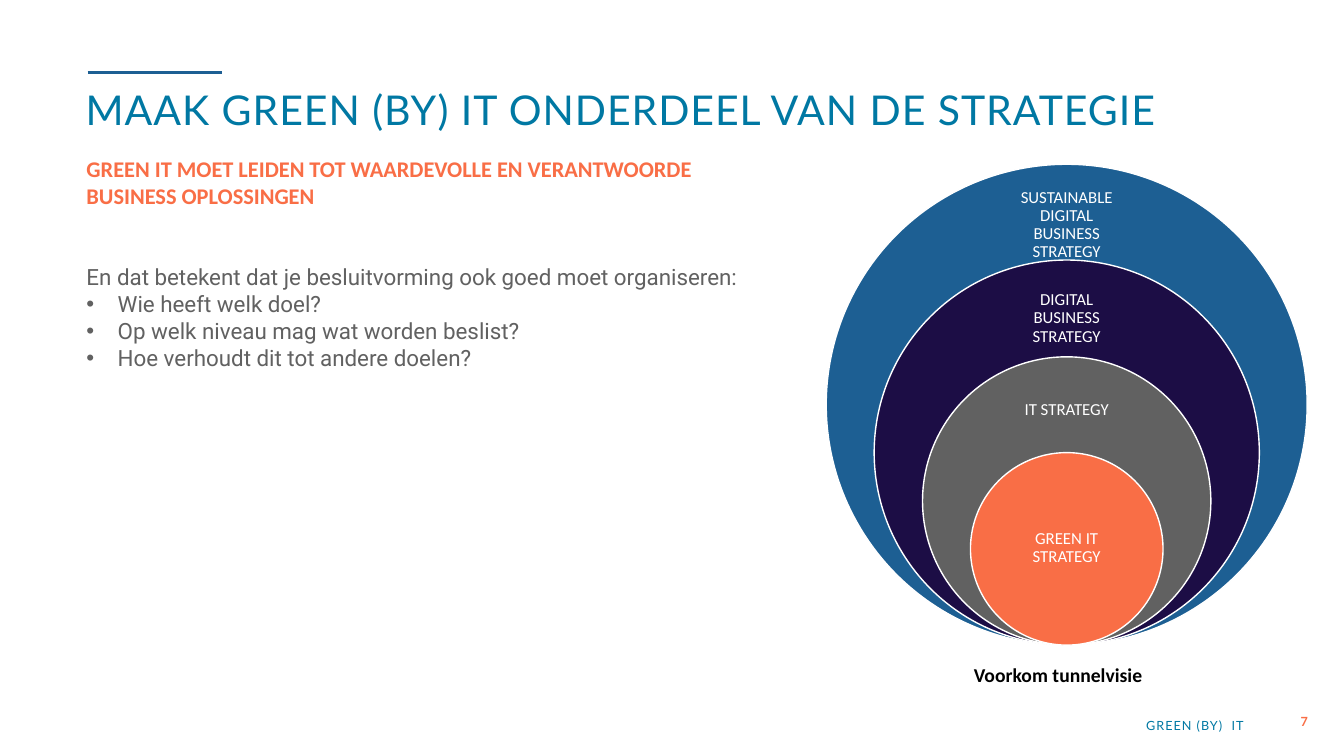
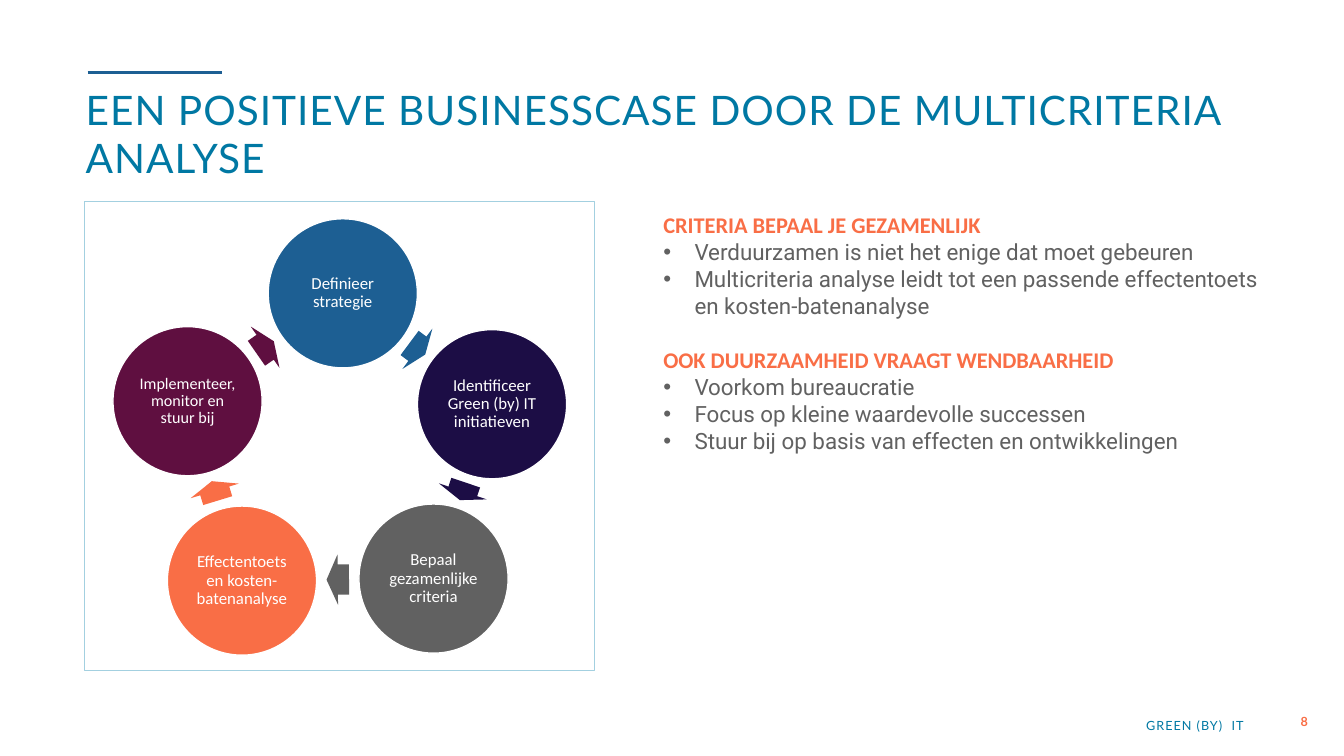
from dataclasses import dataclass
from itertools import pairwise
from math import atan2, degrees, hypot

from lxml.etree import SubElement
from pptx import Presentation
from pptx.dml.color import RGBColor
from pptx.enum.shapes import MSO_CONNECTOR, MSO_SHAPE
from pptx.enum.text import MSO_ANCHOR, PP_ALIGN
from pptx.oxml.ns import qn
from pptx.util import Inches, Pt


@dataclass(frozen=True)
class Theme:
    blue: str = "1D5F93"
    navy: str = "1C0D45"
    grey: str = "616161"
    orange: str = "F96E46"
    plum: str = "5F0F40"
    teal: str = "0078A3"
    pale_blue: str = "A3D0E0"
    white: str = "FFFFFF"
    black: str = "000000"
    title_font: str = "Lato"
    heading_font: str = "Calibri"
    body_font: str = "Roboto"
    title_size: float = 29
    body_size: float = 16
    caption_size: float = 14
    label_size: float = 12
    footer_size: float = 9
    tracking: float = 0.7


THEME = Theme()


def write(frame, text, *, font=THEME.heading_font, size=THEME.body_size, color=THEME.grey,
          bold=False, align=PP_ALIGN.LEFT, tracking=0, line_spacing=None, space_before=0,
          bullet=False):
    """Fill the empty first paragraph of the frame, or add another one."""
    paragraph = frame.paragraphs[0]
    if paragraph.runs:
        paragraph = frame.add_paragraph()
    paragraph.alignment = align
    if line_spacing:
        paragraph.line_spacing = line_spacing
    if space_before:
        paragraph.space_before = Pt(space_before)
    if bullet:
        properties = paragraph._p.get_or_add_pPr()
        properties.set("marL", str(Inches(0.31)))
        properties.set("indent", str(-Inches(0.31)))
        SubElement(properties, qn("a:buFont")).set("typeface", "Arial")
        SubElement(properties, qn("a:buChar")).set("char", "•")
    run = paragraph.add_run()
    run.text = text
    run.font.name = font
    run.font.size = Pt(size)
    run.font.bold = bold
    run.font.color.rgb = RGBColor.from_string(color)
    if tracking:
        run._r.get_or_add_rPr().set("spc", str(round(tracking * 100)))


def set_frame(frame, anchor, inset=None):
    frame.word_wrap = True
    frame.vertical_anchor = anchor
    if inset is not None:
        frame.margin_left = frame.margin_right = Inches(inset)
        frame.margin_top = frame.margin_bottom = Inches(inset)


class Deck:
    def __init__(self):
        self.presentation = Presentation()
        self.presentation.slide_width = Inches(13.33)
        self.presentation.slide_height = Inches(7.5)
        self.slide = None

    def start_slide(self, title, number, title_size=THEME.title_size):
        self.slide = self.presentation.slides.add_slide(self.presentation.slide_layouts[6])
        self.accent_line()
        title_style = {"font": THEME.title_font, "color": THEME.teal, "tracking": THEME.tracking}
        write(self.text_box(0.85, 0.84, 12.44, 0.77, inset=0), title, size=title_size, **title_style)
        write(self.text_box(11.27, 7.07, 1.6, 0.25), "GREEN (BY)  IT",
              size=THEME.footer_size, **title_style)
        write(self.text_box(12.58, 7, 0.71, 0.32, anchor=MSO_ANCHOR.MIDDLE), str(number),
              font=THEME.title_font, size=THEME.footer_size, color=THEME.orange, bold=True,
              align=PP_ALIGN.CENTER)

    def accent_line(self):
        line = self.slide.shapes.add_connector(
            MSO_CONNECTOR.STRAIGHT, Inches(0.87), Inches(0.72), Inches(2.2), Inches(0.72))
        line.line.color.rgb = RGBColor.from_string(THEME.blue)
        line.line.width = Pt(2.25)
        SubElement(line._element.spPr, qn("a:effectLst"))

    def text_box(self, left, top, width, height, anchor=MSO_ANCHOR.TOP, inset=None):
        box = self.slide.shapes.add_textbox(
            Inches(left), Inches(top), Inches(width), Inches(height))
        set_frame(box.text_frame, anchor, inset)
        return box.text_frame

    def shape(self, kind, left, top, width, height, fill, outline=None):
        shape = self.slide.shapes.add_shape(
            kind, Inches(left), Inches(top), Inches(width), Inches(height))
        shape.shadow.inherit = False
        shape.fill.solid()
        shape.fill.fore_color.rgb = RGBColor.from_string(fill)
        if outline:
            shape.line.color.rgb = RGBColor.from_string(outline)
            shape.line.width = Pt(1)
        else:
            shape.line.fill.background()
        return shape

    def circle(self, center_x, center_y, diameter, fill):
        return self.shape(MSO_SHAPE.OVAL, center_x - diameter / 2, center_y - diameter / 2,
                          diameter, diameter, fill, THEME.white)

    def label(self, frame, text, size=THEME.label_size):
        write(frame, text, size=size, color=THEME.white, align=PP_ALIGN.CENTER, line_spacing=0.9)

    def headings(self, frame, *headings):
        for index, heading in enumerate(headings):
            write(frame, heading, color=THEME.orange, bold=True, space_before=19.5 * (index > 0))

    def section(self, frame, heading, bullets, space_before=0):
        write(frame, heading, color=THEME.orange, bold=True, space_before=space_before)
        self.bullets(frame, bullets)

    def bullets(self, frame, bullets):
        for bullet in bullets:
            write(frame, bullet, font=THEME.body_font, bullet=True)

    def nested_circles(self, center_x, bottom, rings):
        """Draw rings (diameter, label depth, fill, text) that touch at the bottom."""
        label_width, label_height = 1.33, 0.95
        for diameter, label_depth, fill, text in rings:
            self.circle(center_x, bottom - diameter / 2, diameter, fill)
            label_top = bottom - diameter + label_depth - label_height / 2
            self.label(self.text_box(center_x - label_width / 2, label_top, label_width,
                                     label_height, MSO_ANCHOR.MIDDLE, 0.09), text)

    def cycle(self, diameter, steps):
        """Draw steps (x, y, fill, text, size) with an arrow halfway to each next step."""
        for x, y, fill, text, size in steps:
            frame = self.circle(x, y, diameter, fill).text_frame
            set_frame(frame, MSO_ANCHOR.MIDDLE, 0.02)
            self.label(frame, text, size)
        for (x, y, fill, *_), (next_x, next_y, *_) in pairwise(steps + steps[:1]):
            length = 0.53 * (hypot(next_x - x, next_y - y) - diameter)
            height = 0.5
            arrow = self.shape(MSO_SHAPE.RIGHT_ARROW, (x + next_x - length) / 2,
                               (y + next_y - height) / 2, length, height, fill)
            arrow.adjustments[0] = 0.6
            arrow.adjustments[1] = 0.5
            arrow.rotation = degrees(atan2(next_y - y, next_x - x)) % 360


def strategy_slide(deck):
    deck.start_slide("MAAK GREEN (BY) IT ONDERDEEL VAN DE STRATEGIE", 7, title_size=29.3)
    frame = deck.text_box(0.76, 1.49, 7.14, 3.06)
    write(frame, "GREEN IT MOET LEIDEN TOT WAARDEVOLLE EN VERANTWOORDE BUSINESS OPLOSSINGEN",
          color=THEME.orange, bold=True)
    write(frame, "En dat betekent dat je besluitvorming ook goed moet organiseren:",
          font=THEME.body_font, space_before=39)
    deck.bullets(frame, ["Wie heeft welk doel?", "Op welk niveau mag wat worden beslist?",
                         "Hoe verhoudt dit tot andere doelen?"])
    deck.nested_circles(10.58, 6.4, [
        (4.77, 0.6, THEME.blue, "SUSTAINABLE DIGITAL BUSINESS STRATEGY"),
        (3.82, 0.58, THEME.navy, "DIGITAL BUSINESS STRATEGY"),
        (2.86, 0.53, THEME.grey, "IT STRATEGY"),
        (1.91, 0.95, THEME.orange, "GREEN IT STRATEGY"),
    ])
    write(deck.text_box(9.56, 6.53, 2.05, 0.34), "Voorkom tunnelvisie",
          size=THEME.caption_size, color=THEME.black, bold=True)


def business_case_slide(deck):
    deck.start_slide("EEN POSITIEVE BUSINESSCASE DOOR DE MULTICRITERIA ANALYSE", 8)
    deck.shape(MSO_SHAPE.RECTANGLE, 0.84, 2, 5.06, 4.65, THEME.white, THEME.pale_blue)
    deck.cycle(1.48, [
        (3.4, 2.91, THEME.blue, "Definieer strategie", 12),
        (4.88, 4.01, THEME.navy, "Identificeer Green (by) IT initiatieven", 12),
        (4.3, 5.74, THEME.grey, "Bepaal gezamenlijke criteria", 12),
        (2.4, 5.76, THEME.orange, "Effectentoets en kosten-batenanalyse", 12),
        (1.86, 3.98, THEME.plum, "Implementeer, monitor en stuur bij", 11.5),
    ])
    frame = deck.text_box(6.48, 2.05, 6.22, 3.33)
    deck.section(frame, "CRITERIA BEPAAL JE GEZAMENLIJK", [
        "Verduurzamen is niet het enige dat moet gebeuren",
        "Multicriteria analyse leidt tot een passende effectentoets en kosten-batenanalyse",
    ])
    deck.section(frame, "OOK DUURZAAMHEID VRAAGT WENDBAARHEID", [
        "Voorkom bureaucratie",
        "Focus op kleine waardevolle successen",
        "Stuur bij op basis van effecten en ontwikkelingen",
    ], space_before=19.5)


def main():
    deck = Deck()
    strategy_slide(deck)
    business_case_slide(deck)
    deck.presentation.save("out.pptx")


if __name__ == "__main__":
    main()
